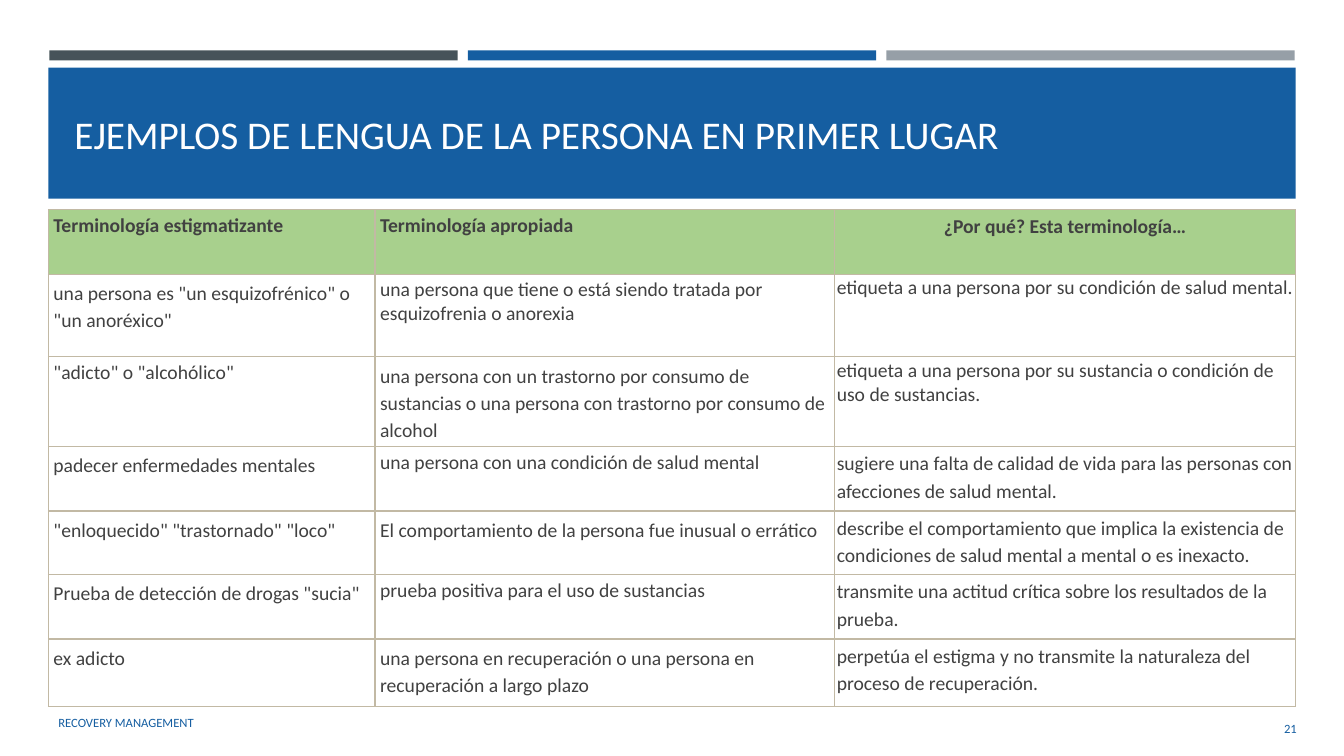
from dataclasses import dataclass

from lxml import etree
from pptx import Presentation
from pptx import util as u
from pptx.dml.color import RGBColor
from pptx.enum import shapes, text
from pptx.oxml import ns


@dataclass(frozen=True)
class Theme:
    font: str = "Calibri"
    blue: str = "155EA1"
    slate: str = "465359"
    grey: str = "969FA7"
    white: str = "FFFFFF"
    green: str = "A8D08D"
    ink: str = "414141"
    border: str = "C2B9A4"
    title_size: int = 28
    table_size: int = 14
    footer_size: int = 9


@dataclass(frozen=True)
class Bar:
    left: float
    top: float
    width: float
    height: float
    color: str


@dataclass(frozen=True)
class Label:
    left: float
    top: float
    width: float
    height: float
    words: str
    size: int
    color: str
    align: text.PP_ALIGN = text.PP_ALIGN.LEFT


@dataclass(frozen=True)
class Entry:
    words: str
    tight: bool = False  # single line spacing instead of 1.15


@dataclass(frozen=True)
class Row:
    height: float
    entries: tuple[Entry, Entry, Entry]


THEME = Theme()
LEFT, WIDTH = 0.48, 12.37
COLUMNS = (3.24, 4.56, 4.57)
INSETS = ((0.05, 0.04), (0.05, 0.04), (0.02, 0.02))  # sides, top and bottom

BARS = [Bar(0.49 + 4.15 * i, 0.5, 4.05, 0.1, color)
        for i, color in enumerate((THEME.slate, THEME.blue, THEME.grey))]
BARS.append(Bar(LEFT, 0.67, WIDTH, 1.3, THEME.blue))

LABELS = (
    Label(0.64, 0.77, 12.06, 1.11, "EJEMPLOS DE LENGUA DE LA PERSONA EN PRIMER LUGAR",
          THEME.title_size, THEME.white),
    Label(LEFT, 6.97, 7.46, 0.4, "RECOVERY MANAGEMENT", THEME.footer_size, THEME.blue),
    Label(11.81, 7.03, 1.15, 0.4, "21", THEME.footer_size, THEME.blue,
          text.PP_ALIGN.RIGHT),
)

ROWS = (
    Row(0.64, (Entry("Terminología estigmatizante", True),
               Entry("Terminología apropiada", True),
               Entry("¿Por qué? Esta terminología…"))),
    Row(0.82, (Entry('una persona es "un esquizofrénico" o "un anoréxico"'),
               Entry("una persona que tiene o está siendo tratada por "
                     "esquizofrenia o anorexia", True),
               Entry("etiqueta a una persona por su condición de salud mental.", True))),
    Row(0.89, (Entry('"adicto" o "alcohólico"', True),
               Entry("una persona con un trastorno por consumo de sustancias o una "
                     "persona con trastorno por consumo de alcohol"),
               Entry("etiqueta a una persona por su sustancia o condición de uso "
                     "de sustancias.", True))),
    Row(0.64, (Entry("padecer enfermedades mentales"),
               Entry("una persona con una condición de salud mental", True),
               Entry("sugiere una falta de calidad de vida para las personas con "
                     "afecciones de salud mental."))),
    Row(0.63, (Entry('"enloquecido" "trastornado" "loco"'),
               Entry("El comportamiento de la persona fue inusual o errático"),
               Entry("describe el comportamiento que implica la existencia de "
                     "condiciones de salud mental a mental o es inexacto."))),
    Row(0.64, (Entry('Prueba de detección de drogas "sucia"'),
               Entry("prueba positiva para el uso de sustancias", True),
               Entry("transmite una actitud crítica sobre los resultados de la prueba."))),
    Row(0.67, (Entry("ex adicto"),
               Entry("una persona en recuperación o una persona en recuperación "
                     "a largo plazo"),
               Entry("perpetúa el estigma y no transmite la naturaleza del proceso "
                     "de recuperación."))),
)


def add_span(para, words: str, size: int, color: str, bold: bool = False) -> None:
    span = para.add_run()
    span.text = words
    span.font.name = THEME.font
    span.font.size = u.Pt(size)
    span.font.bold = bold
    span.font.color.rgb = RGBColor.from_string(color)


def draw_bar(page, bar: Bar) -> None:
    shape = page.shapes.add_shape(
        shapes.MSO_SHAPE.RECTANGLE, u.Inches(bar.left), u.Inches(bar.top),
        u.Inches(bar.width), u.Inches(bar.height))
    shape.shadow.inherit = False
    shape.fill.solid()
    shape.fill.fore_color.rgb = RGBColor.from_string(bar.color)
    shape.line.fill.background()


def draw_label(page, label: Label) -> None:
    box = page.shapes.add_textbox(u.Inches(label.left), u.Inches(label.top),
                                  u.Inches(label.width), u.Inches(label.height))
    frame = box.text_frame
    frame.word_wrap = True
    frame.vertical_anchor = text.MSO_ANCHOR.MIDDLE
    para = frame.paragraphs[0]
    para.alignment = label.align
    add_span(para, label.words, label.size, label.color)


def add_borders(cell) -> None:
    properties = cell._tc.get_or_add_tcPr()
    for side in ("a:lnL", "a:lnR", "a:lnT", "a:lnB"):
        line = etree.SubElement(properties, ns.qn(side), w=str(u.Pt(1)))
        fill = etree.SubElement(line, ns.qn("a:solidFill"))
        etree.SubElement(fill, ns.qn("a:srgbClr"), val=THEME.border)


def fill_cell(cell, entry: Entry, inset: tuple[float, float], header: bool) -> None:
    side, edge = inset
    cell.margin_left = cell.margin_right = u.Inches(side)
    cell.margin_top = cell.margin_bottom = u.Inches(edge)
    add_borders(cell)
    cell.fill.solid()
    cell.fill.fore_color.rgb = RGBColor.from_string(THEME.green if header else THEME.white)
    para = cell.text_frame.paragraphs[0]
    para.line_spacing = 1.0 if entry.tight else 1.15
    centered = header and not entry.tight
    para.alignment = text.PP_ALIGN.CENTER if centered else text.PP_ALIGN.LEFT
    add_span(para, entry.words, THEME.table_size, THEME.ink, header)


def draw_table(page) -> None:
    height = sum(row.height for row in ROWS)
    table = page.shapes.add_table(
        len(ROWS), len(COLUMNS), u.Inches(LEFT), u.Inches(2.08),
        u.Inches(WIDTH), u.Inches(height)).table
    table.first_row = table.horz_banding = False
    for column, width in zip(table.columns, COLUMNS):
        column.width = u.Inches(width)
    for r, row in enumerate(ROWS):
        table.rows[r].height = u.Inches(row.height)
        for c, entry in enumerate(row.entries):
            fill_cell(table.cell(r, c), entry, INSETS[c], r == 0)


def main() -> None:
    deck = Presentation()
    deck.slide_width, deck.slide_height = u.Inches(13.33), u.Inches(7.5)
    page = deck.slides.add_slide(deck.slide_layouts[6])
    # Colour strips and title band
    for bar in BARS:
        draw_bar(page, bar)
    # Title, footer and page number
    for label in LABELS:
        draw_label(page, label)
    # Terminology table
    draw_table(page)
    deck.save("out.pptx")


if __name__ == "__main__":
    main()
